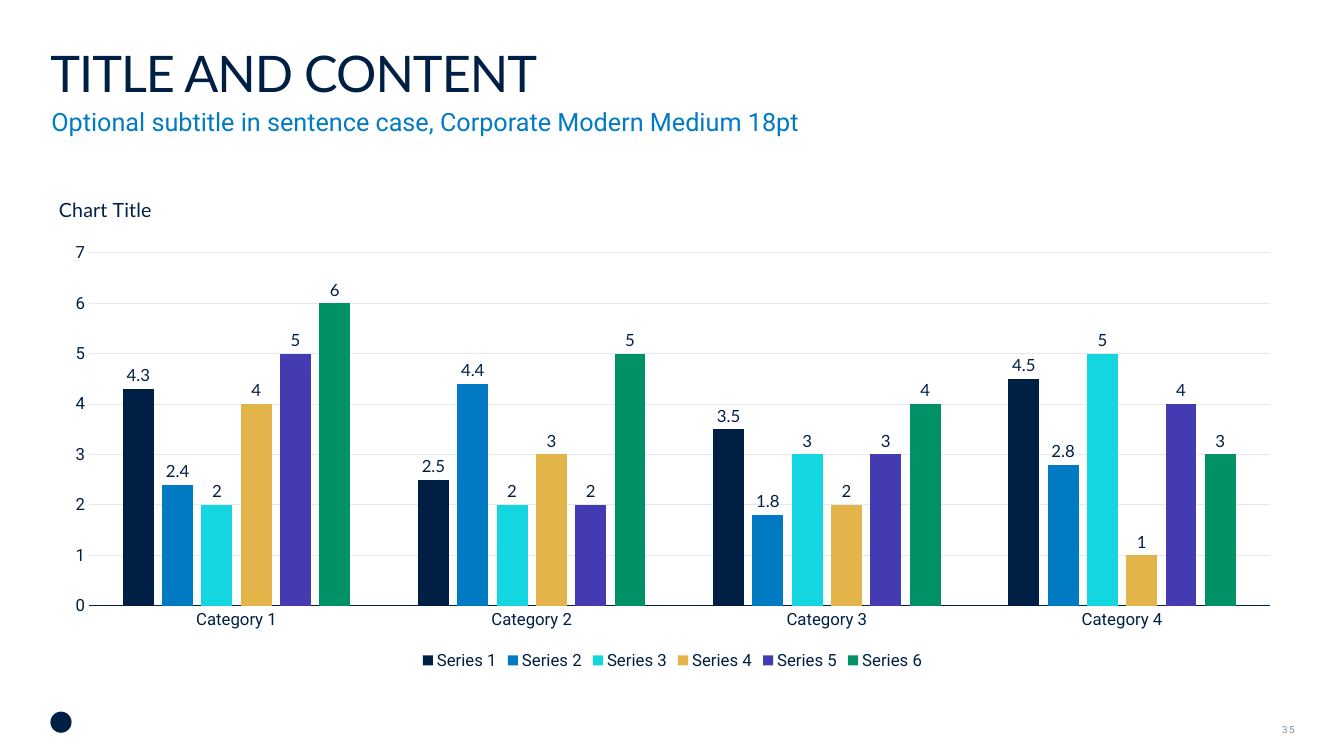
"""Build a slide with a title, a subtitle and a clustered column chart."""
from lxml import etree
from pptx import Presentation
from pptx.chart.data import CategoryChartData
from pptx.dml.color import RGBColor
from pptx.enum import chart as ch, shapes, text
from pptx.oxml.ns import qn
from pptx.util import Inches, Pt

NAVY = RGBColor(0x00, 0x1F, 0x45)
BLUE = RGBColor(0x00, 0x7B, 0xC3)
CYAN = RGBColor(0x14, 0xD6, 0xE0)
GOLD = RGBColor(0xE3, 0xB4, 0x49)
VIOLET = RGBColor(0x44, 0x3B, 0xB2)
GREEN = RGBColor(0x00, 0x91, 0x66)
GRAY = RGBColor(0x7E, 0x8F, 0xA1)
PALE = RGBColor(0xE5, 0xE9, 0xED)


def style(font, size, color, name="Roboto"):
    font.size, font.name, font.bold = Pt(size), name, False
    font.color.rgb = color


def place(parent, index, **spots):
    for old in parent.findall(qn("c:layout")):
        parent.remove(old)
    layout = etree.Element(qn("c:layout"))
    manual = etree.SubElement(layout, qn("c:manualLayout"))
    for tag, val in spots.items():
        etree.SubElement(manual, qn("c:" + tag)).set("val", str(val))
    parent.insert(index, layout)


deck = Presentation()
deck.slide_width, deck.slide_height = Inches(13.33), Inches(7.5)
slide = deck.slides.add_slide(deck.slide_layouts[5])

title = slide.shapes.title
title.left, title.top = Inches(0.5), Inches(0.41)
title.width, title.height = Inches(12.33), Inches(0.61)
subtitle = slide.shapes.add_textbox(Inches(0.51), Inches(1.05), Inches(12.33), Inches(0.32))
number = slide.shapes.add_textbox(Inches(12.43), Inches(7.18), Inches(0.41), Inches(0.11))

LEFT, RIGHT = text.PP_ALIGN.LEFT, text.PP_ALIGN.RIGHT
TOP, MIDDLE, BOTTOM = text.MSO_ANCHOR.TOP, text.MSO_ANCHOR.MIDDLE, text.MSO_ANCHOR.BOTTOM
for box, words, size, color, name, align, anchor, gap in (
    (title, "TITLE AND CONTENT", 36, NAVY, "Lato", LEFT, BOTTOM, -70),
    (subtitle, "Optional subtitle in sentence case, Corporate Modern Medium 18pt",
     18, BLUE, "Roboto", LEFT, TOP, 0),
    (number, "35", 7, GRAY, "Roboto", RIGHT, MIDDLE, 100),
):
    frame = box.text_frame
    frame.text = words
    frame.word_wrap = True
    frame.auto_size = text.MSO_AUTO_SIZE.NONE
    frame.vertical_anchor = anchor
    frame.margin_left = frame.margin_right = frame.margin_top = frame.margin_bottom = 0
    line = frame.paragraphs[0]
    line.alignment = align
    style(line.runs[0].font, size, color, name)
    line.runs[0].font._element.set("spc", str(gap))
subtitle.text_frame.paragraphs[0].line_spacing = 1.03

badge = slide.shapes.add_shape(
    shapes.MSO_SHAPE.OVAL, Inches(0.5), Inches(7.06), Inches(0.21), Inches(0.21))
badge.shadow.inherit = False
badge.fill.solid()
badge.fill.fore_color.rgb = NAVY
badge.line.fill.background()

rows = (
    ((4.3, 2.5, 3.5, 4.5), NAVY),
    ((2.4, 4.4, 1.8, 2.8), BLUE),
    ((2, 2, 3, 5), CYAN),
    ((4, 3, 2, 1), GOLD),
    ((5, 2, 3, 4), VIOLET),
    ((6, 5, 4, 3), GREEN),
)
data = CategoryChartData()
data.categories = [f"Category {n}" for n in range(1, 5)]
for n, (vals, color) in enumerate(rows, 1):
    data.add_series(f"Series {n}", vals)
chart = slide.shapes.add_chart(
    ch.XL_CHART_TYPE.COLUMN_CLUSTERED,
    Inches(0.5), Inches(1.8), Inches(12.34), Inches(4.89), data).chart
style(chart.font, 12, NAVY)

chart.has_title = True
head = chart.chart_title
head.text_frame.text = "Chart Title"
style(head.text_frame.paragraphs[0].runs[0].font, 14, NAVY, "Lato")
place(head._element, 1, xMode="edge", yMode="edge", x=0.004, y=0.02)
place(chart._chartSpace.find(".//" + qn("c:plotArea")), 0, layoutTarget="inner",
      xMode="edge", yMode="edge", x=0.031, y=0.145, w=0.949, h=0.716)

chart.has_legend = True
chart.legend.position = ch.XL_LEGEND_POSITION.BOTTOM
chart.legend.include_in_layout = False
style(chart.legend.font, 12, NAVY)

for axis in (chart.category_axis, chart.value_axis):
    axis.major_tick_mark = axis.minor_tick_mark = ch.XL_TICK_MARK.NONE
    style(axis.tick_labels.font, 12, NAVY)
chart.category_axis.format.line.color.rgb = NAVY
chart.category_axis.format.line.width = Pt(1)
scale = chart.value_axis
scale.minimum_scale, scale.maximum_scale, scale.major_unit = 0, 7, 1
scale.format.line.fill.background()
scale.major_gridlines.format.line.color.rgb = PALE
scale.major_gridlines.format.line.width = Pt(0.75)

plot = chart.plots[0]
plot.gap_width, plot.overlap, plot.vary_by_categories = 219, -27, False
for bars, (vals, color) in zip(plot.series, rows):
    bars.format.fill.solid()
    bars.format.fill.fore_color.rgb = color
    labels = bars.data_labels
    labels.show_value = True
    labels.position = ch.XL_LABEL_POSITION.OUTSIDE_END
    style(labels.font, 12, NAVY, "Lato")

deck.save("out.pptx")
